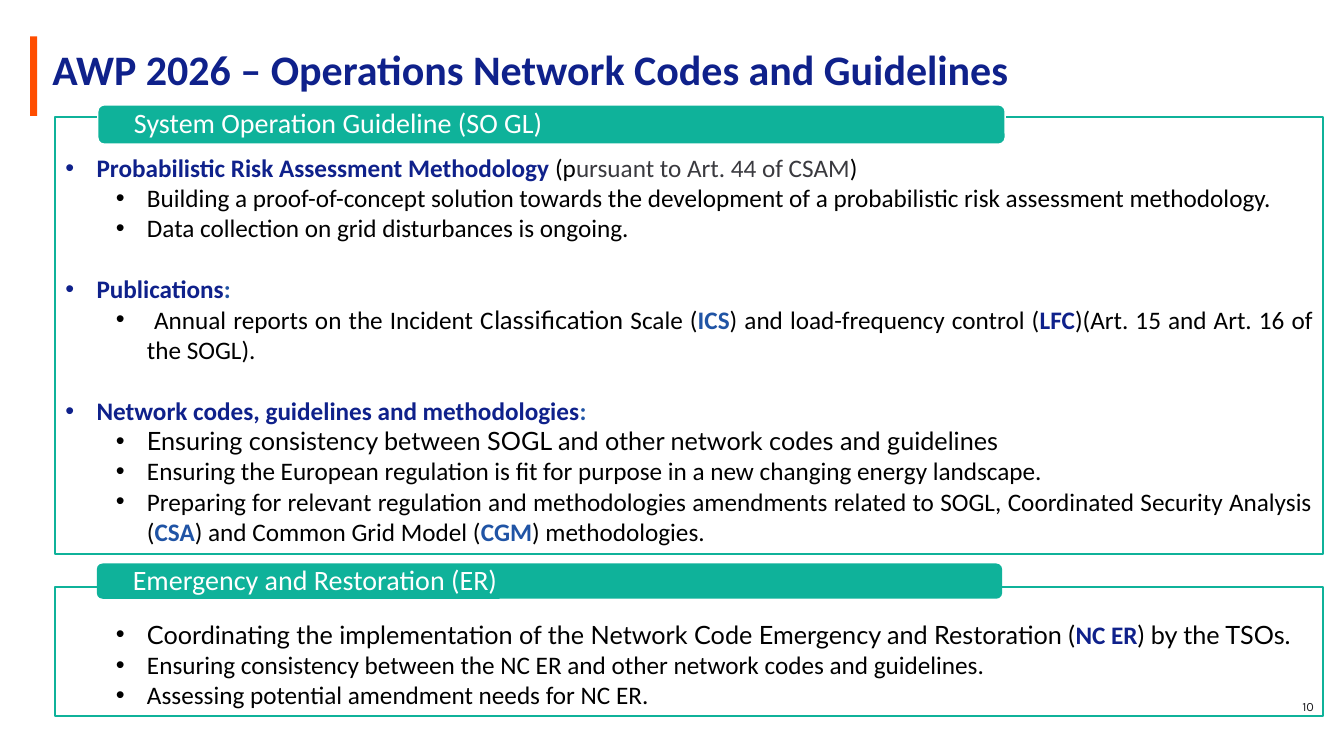
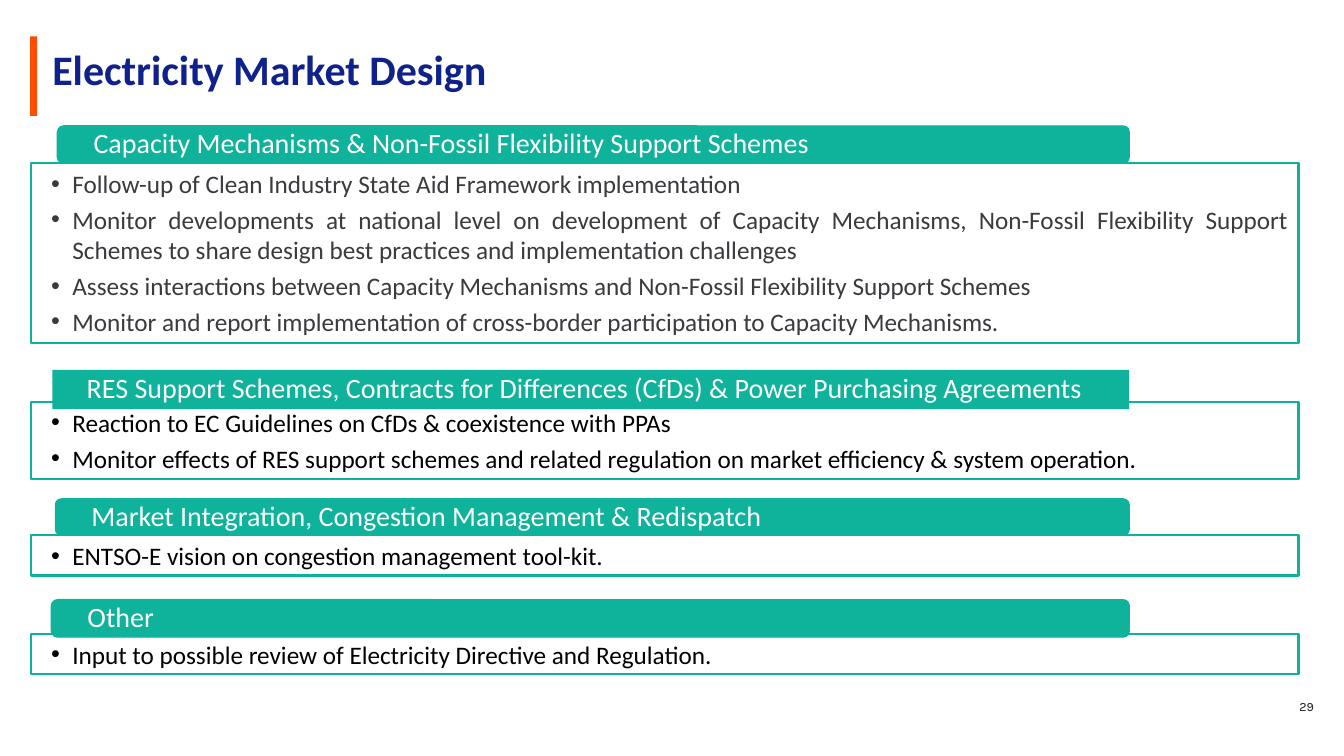
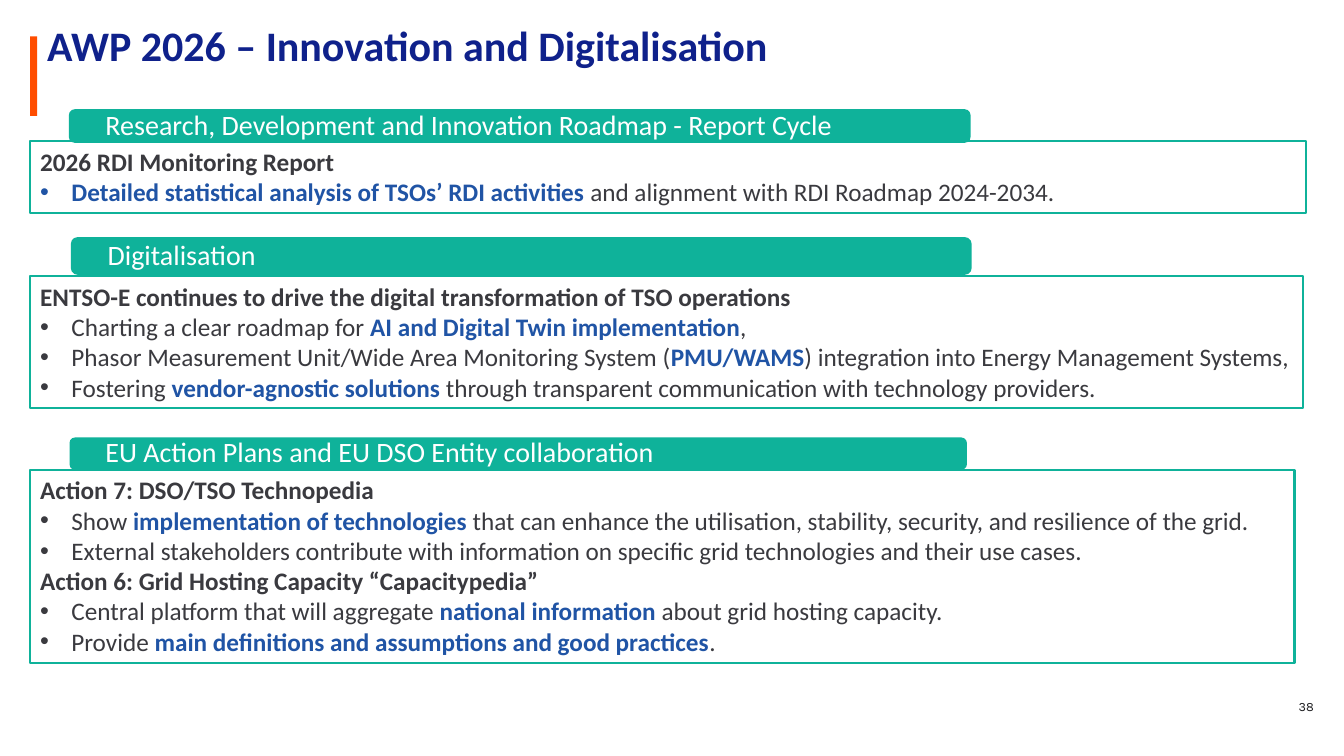
"""Build three work programme slides with tabbed, bordered panels."""
from pptx import Presentation
from pptx.dml.color import RGBColor
from pptx.enum.shapes import MSO_SHAPE as Kind
from pptx.enum.text import MSO_ANCHOR as Anchor, PP_ALIGN as Align
from pptx.oxml.ns import qn
from pptx.util import Inches, Pt
from lxml.etree import SubElement

WIDE, HIGH = 13.33, 7.5
TEAL, NAVY, ORANGE = "0FB29A", "0F218B", "FF4D00"
WHITE, DARK = "FFFFFF", "1D1D20"
ROUND, RECT = Kind.ROUNDED_RECTANGLE, Kind.RECTANGLE

INKS = {
    "black": ("000000", False, "Calibri"),
    "grey": ("3A3A3F", False, "Calibri"),
    "strong": ("3A3A3F", True, "Calibri"),
    "navy": (NAVY, True, "Calibri"),
    "blue": ("2054A5", True, "Calibri"),
    "lato": ("000000", False, "Lato"),
}

# Each level: left margin, hanging indent, space before, space after
LEVELS = {
    "plain": (0, 0, 0, 0),
    "head": (0.31, 0.31, 22, 0),
    "sub": (0.81, 0.31, 0, 0),
    "dot": (0.31, 0.31, 0, 0),
    "item": (0.31, 0.21, 0, 4),
}

# Each panel: tab text, tab place, tab shape, tab line, box place, top inset, ink, rows
SLIDES = [
    ("AWP 2026 – Operations Network Codes and Guidelines", (0.42, 0.51), 10, [
        ("System Operation Guideline (SO GL)", (0.97, 1.04, 9, 0.39), ROUND, WHITE,
         (0.55, 1.16, 12.57, 4.34), 0.35, "black", [
            ("head", ("Probabilistic Risk Assessment Methodology ", "navy"), "(p",
             ("ursuant to Art. 44 of CSAM", "grey"), ")"),
            ("sub", "Building a proof-of-concept solution towards the development of a "
             "probabilistic risk assessment methodology."),
            ("sub", "Data collection on grid disturbances is ongoing."),
            ("head", ("Publications", "navy"), (":", "blue")),
            ("sub", " Annual reports on the Incident C", ("lassification", "lato"),
             " Scale (", ("ICS", "blue"), ") and load-frequency control (",
             ("LFC", "navy"), ")(Art. 15 and Art. 16 of the SOGL)."),
            ("head", ("Network codes, guidelines and methodologies", "navy"), (":", "blue")),
            ("sub", ("Ensuring consistency between SOGL and other network codes and "
                     "guidelines", "lato")),
            ("sub", "Ensuring the European regulation is fit for purpose in a new "
             "changing energy landscape."),
            ("sub", "Preparing for relevant regulation and methodologies amendments "
             "related to SOGL, Coordinated Security Analysis (", ("CSA", "blue"),
             ") and Common Grid Model (", ("CGM", "blue"), ") methodologies."),
         ]),
        ("Emergency and Restoration (ER)", (0.96, 5.59, 8.98, 0.35), ROUND, None,
         (0.55, 5.82, 12.57, 1.28), 0.32, "black", [
            ("sub", ("Coordinating the implementation of the Network Code Emergency and "
                     "Restoration (", "lato"), ("NC ER", "navy"), (") by the TSOs.", "lato")),
            ("sub", "Ensuring consistency between the NC ER and other network codes and "
             "guidelines."),
            ("sub", "Assessing potential amendment needs for NC ER."),
         ]),
    ]),
    ("Electricity Market Design", (0.42, 0.51), 29, [
        ("Capacity Mechanisms & Non-Fossil Flexibility Support Schemes",
         (0.57, 1.25, 10.63, 0.37), ROUND, TEAL, (0.31, 1.62, 12.57, 1.78), 0.05, "grey", [
            ("item", "Follow-up of Clean Industry State Aid Framework implementation"),
            ("item", "Monitor developments at national level on development of Capacity "
             "Mechanisms, Non-Fossil Flexibility Support Schemes to share design best "
             "practices and implementation challenges"),
            ("item", "Assess interactions between Capacity Mechanisms and Non-Fossil "
             "Flexibility Support Schemes"),
            ("item", "Monitor and report implementation of cross-border participation to "
             "Capacity Mechanisms."),
         ]),
        ("RES Support Schemes, Contracts for Differences (CfDs) & Power Purchasing Agreements",
         (0.52, 3.67, 10.68, 0.39), RECT, None, (0.31, 3.99, 12.57, 0.76), 0.05, "black", [
            ("item", "Reaction to EC Guidelines on CfDs & coexistence with PPAs"),
            ("item", "Monitor effects of RES support schemes and related regulation on "
             "market efficiency & system operation."),
         ]),
        ("Market Integration, Congestion Management & Redispatch",
         (0.55, 4.95, 10.65, 0.36), ROUND, TEAL, (0.31, 5.31, 12.57, 0.4), 0.05, "black", [
            ("item", "ENTSO-E vision on congestion management tool-kit."),
         ]),
        ("Other", (0.51, 5.95, 10.69, 0.37), ROUND, TEAL,
         (0.31, 6.29, 12.57, 0.4), 0.05, "black", [
            ("item", "Input to possible review of Electricity Directive and Regulation."),
         ]),
    ]),
    ("AWP 2026 – Innovation and Digitalisation", (0.37, 0.28), 38, [
        ("Research, Development and Innovation Roadmap - Report Cycle",
         (0.69, 1.09, 8.93, 0.32), ROUND, TEAL, (0.3, 1.4, 12.65, 0.71), 0.05, "grey", [
            ("plain", ("2026 RDI Monitoring Report", "strong")),
            ("dot", ("Detailed statistical analysis of TSOs’ RDI activities ", "blue"),
             "and alignment with RDI Roadmap 2024-2034."),
         ]),
        ("Digitalisation", (0.71, 2.36, 8.92, 0.36), ROUND, TEAL,
         (0.3, 2.74, 12.62, 1.31), 0.05, "grey", [
            ("plain", ("ENTSO-E continues to drive the digital transformation of TSO "
                       "operations", "strong")),
            ("dot", "Charting a clear roadmap for ",
             ("AI and Digital Twin implementation", "blue"), ","),
            ("dot", "Phasor Measurement Unit/Wide Area Monitoring System (",
             ("PMU/WAMS", "blue"), ") integration into Energy Management Systems,"),
            ("dot", "Fostering ", ("vendor-agnostic solutions ", "blue"),
             "through transparent communication with technology providers."),
         ]),
        ("EU Action Plans and EU DSO Entity collaboration",
         (0.69, 4.34, 8.9, 0.32), ROUND, None, (0.3, 4.66, 12.54, 1.92), 0.05, "grey", [
            ("plain", ("Action 7: DSO/TSO Technopedia", "strong")),
            ("dot", "Show ", ("implementation of technologies ", "blue"),
             "that can enhance the utilisation, stability, security, and resilience of "
             "the grid."),
            ("dot", "External stakeholders contribute with information on specific grid "
             "technologies and their use cases."),
            ("plain", ("Action 6: Grid Hosting Capacity “Capacitypedia”", "strong")),
            ("dot", "Central platform that will aggregate ",
             ("national information ", "blue"), "about grid hosting capacity."),
            ("dot", "Provide ",
             ("main definitions and assumptions and good practices", "blue"), "."),
         ]),
    ]),
]


def tint(code):
    return RGBColor.from_string(code)


def style(font, size, ink, bold=False, face="Calibri"):
    font.size, font.bold, font.name = Pt(size), bold, face
    font.color.rgb = tint(ink)


def block(slide, kind, place, fill=None, line=None, width=1):
    shape = slide.shapes.add_shape(kind, *map(Inches, place))
    shape.shadow.inherit = False
    if fill:
        shape.fill.solid()
        shape.fill.fore_color.rgb = tint(fill)
    else:
        shape.fill.background()
    if line:
        shape.line.color.rgb = tint(line)
        shape.line.width = Pt(width)
    else:
        shape.line.fill.background()
    return shape


def label(slide, place, text, gap, align, *look):
    frame = slide.shapes.add_textbox(*map(Inches, place)).text_frame
    frame.word_wrap = True
    frame.vertical_anchor = Anchor.MIDDLE
    frame.text = text
    para = frame.paragraphs[0]
    para.alignment, para.line_spacing = align, Pt(gap)
    style(para.runs[0].font, *look)


def tab(slide, text, place, kind, line):
    frame = block(slide, kind, place, TEAL, line).text_frame
    frame.word_wrap = True
    frame.margin_left = frame.margin_right = Inches(0.34)
    frame.margin_top = frame.margin_bottom = 0
    frame.vertical_anchor = Anchor.MIDDLE
    frame.text = text
    para = frame.paragraphs[0]
    para.alignment, para.line_spacing = Align.LEFT, 0.9
    style(para.runs[0].font, 20, WHITE)


def box(slide, place, top, ink, rows):
    frame = block(slide, RECT, place, None, TEAL, 1.5).text_frame
    frame.word_wrap = True
    frame.margin_top = Inches(top)
    frame.vertical_anchor = Anchor.TOP
    for num, (level, *parts) in enumerate(rows):
        para = frame.add_paragraph() if num else frame.paragraphs[0]
        left, hang, before, after = LEVELS[level]
        para.alignment = Align.JUSTIFY
        para.space_before = Pt(before if num else 0)
        para.space_after = Pt(after)
        if hang:
            props = para._p.get_or_add_pPr()
            props.set("marL", str(Inches(left)))
            props.set("indent", str(-Inches(hang)))
            SubElement(props, qn("a:buFont"), typeface="Arial")
            SubElement(props, qn("a:buChar"), char="•")
        for part in parts:
            text, name = (part, ink) if isinstance(part, str) else part
            run = para.add_run()
            run.text = text
            style(run.font, 18, *INKS[name])


def main():
    deck = Presentation()
    deck.slide_width, deck.slide_height = Inches(WIDE), Inches(HIGH)
    for title, spot, page, panels in SLIDES:
        slide = deck.slides.add_slide(deck.slide_layouts[6])
        block(slide, RECT, (0.3, 0.36, 0.07, 0.79), ORANGE)
        label(slide, (*spot, 12.71, 0.39), title, 32, Align.LEFT, 30, NAVY, True)
        for text, place, kind, line, *body in panels:
            box(slide, *body)
            tab(slide, text, place, kind, line)
        label(slide, (6.75, 6.82, 6.38, 0.4), str(page), 9, Align.RIGHT,
              9, DARK, False, "Karla")
    deck.save("out.pptx")


if __name__ == "__main__":
    main()
